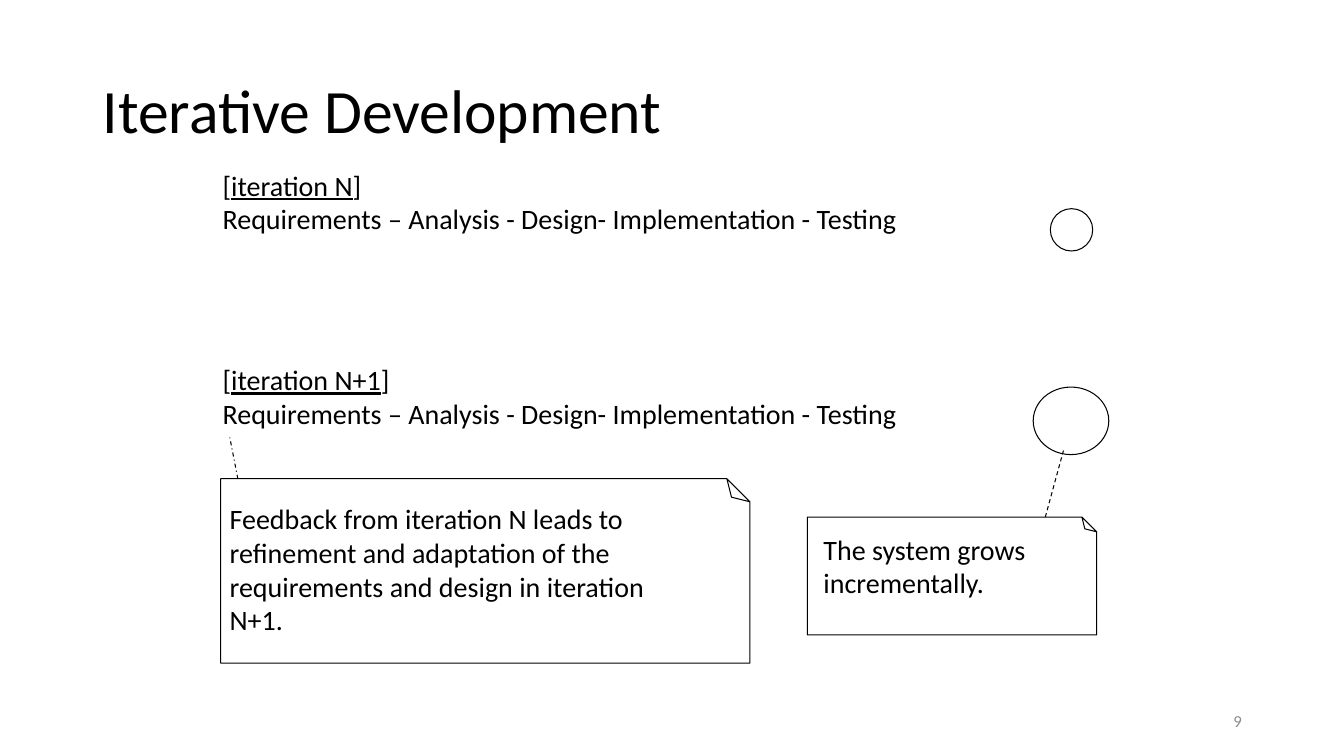
from dataclasses import dataclass

import pptx
import pptx.dml.color
import pptx.enum.dml
import pptx.enum.shapes
import pptx.enum.text
import pptx.oxml
import pptx.oxml.ns
import pptx.util

COLUMNS, ROWS = 40, 22.5
SLIDE_WIDTH, SLIDE_HEIGHT = pptx.util.Inches(13.33), pptx.util.Inches(7.5)
PHASES = "Requirements – Analysis - Design- Implementation - Testing"
ALIGN = pptx.enum.text.PP_ALIGN
ANCHOR = pptx.enum.text.MSO_ANCHOR
SHAPE = pptx.enum.shapes.MSO_SHAPE
DASH = pptx.enum.dml.MSO_LINE


@dataclass(frozen=True)
class Theme:
    font: str = "Calibri"
    ink: str = "000000"
    muted: str = "8C8C8C"
    title_size: int = 44
    body_size: int = 20
    number_size: int = 12
    line_width: float = 0.75


@dataclass(frozen=True)
class Box:
    """An area of the slide, in grid columns and rows."""
    left: float
    top: float
    width: float
    height: float

    def inner(self, left, top, width, height):
        return Box(self.left + left, self.top + top, width, height)

    def lengths(self):
        return (*point(self.left, self.top), *point(self.width, self.height))


THEME = Theme()


def point(column, row):
    return round(SLIDE_WIDTH * column / COLUMNS), round(SLIDE_HEIGHT * row / ROWS)


def color(value):
    return pptx.dml.color.RGBColor.from_string(value)


def add_element(parent, tag, **attributes):
    parent.append(parent.makeelement(pptx.oxml.ns.qn(tag), attributes))


def write_text(frame, lines, size=THEME.body_size, ink=THEME.ink, align=ALIGN.LEFT,
               anchor=ANCHOR.TOP, spacing=1.0, wrap=False):
    """Each line is a list of (text, underlined) runs."""
    frame.word_wrap = wrap
    frame.vertical_anchor = anchor
    frame.auto_size = (pptx.enum.text.MSO_AUTO_SIZE.NONE if wrap
                       else pptx.enum.text.MSO_AUTO_SIZE.SHAPE_TO_FIT_TEXT)
    for index, runs in enumerate(lines):
        paragraph = frame.add_paragraph() if index else frame.paragraphs[0]
        paragraph.alignment = align
        paragraph.line_spacing = spacing
        for text, underlined in runs:
            run = paragraph.add_run()
            run.text = text
            run.font.name = THEME.font
            run.font.size = pptx.util.Pt(size)
            run.font.underline = underlined
            run.font.color.rgb = color(ink)


def add_text(slide, box, lines, **text_format):
    write_text(slide.shapes.add_textbox(*box.lengths()).text_frame, lines, **text_format)


def style_line(line):
    line.color.rgb = color(THEME.ink)
    line.width = pptx.util.Pt(THEME.line_width)


def add_outline(slide, kind, box):
    shape = slide.shapes.add_shape(kind, *box.lengths())
    shape.shadow.inherit = False
    shape.fill.background()
    style_line(shape.line)
    return shape


def add_title(slide, box, text):
    title = slide.shapes.title
    title.left, title.top, title.width, title.height = box.lengths()
    write_text(title.text_frame, [[(text, False)]], size=THEME.title_size,
               anchor=ANCHOR.MIDDLE, spacing=0.9, wrap=True)


def add_iteration(slide, box, name, circle):
    """Write the phases and draw the system as a circle, placed relative to the box."""
    heading = [("[", False), (name, True), ("]", False)]
    add_text(slide, box, [heading, [(PHASES, False)]])
    add_outline(slide, SHAPE.OVAL, box.inner(*circle))


def add_note(slide, box, lines, text_area, pointer, dash):
    """Draw a dog-eared note; the pointer runs from its top edge to what it explains."""
    properties = add_outline(slide, SHAPE.FOLDED_CORNER, box).element.spPr
    properties.find(pptx.oxml.ns.qn("a:xfrm")).set("flipV", "1")
    geometry = properties.find(pptx.oxml.ns.qn("a:prstGeom"))
    adjustments = geometry.find(pptx.oxml.ns.qn("a:avLst"))
    add_element(adjustments, "a:gd", name="adj", fmla="val 12500")
    add_text(slide, box.inner(*text_area), [[(line, False)] for line in lines])
    start, end = [point(box.left + column, box.top + row) for column, row in pointer]
    connector = slide.shapes.add_connector(
        pptx.enum.shapes.MSO_CONNECTOR.STRAIGHT, *start, *end)
    style_line(connector.line)
    connector.line.dash_style = dash
    add_element(connector.element.spPr, "a:effectLst")


def add_page_number(slide, box, number):
    add_text(slide, box, [[(number, False)]], size=THEME.number_size, ink=THEME.muted,
             align=ALIGN.RIGHT, anchor=ANCHOR.MIDDLE, wrap=True)


def build_iteration_slide(presentation):
    slide = presentation.slides.add_slide(presentation.slide_layouts[5])
    add_title(slide, Box(2.76, 1.2, 34.5, 4.35), "Iterative Development")
    add_iteration(slide, Box(6.33, 4.86, 20.88, 2.31), "iteration N",
                  circle=(24.93, 1.35, 1.26, 1.26))
    add_iteration(slide, Box(6.33, 10.65, 20.88, 2.31), "iteration N+1",
                  circle=(24.42, 0.87, 2.25, 2.01))
    add_note(slide, Box(6.57, 14.25, 15.75, 5.49),
             ["Feedback from iteration N leads to", "refinement and adaptation of the",
              "requirements and design in iteration", "N+1."],
             text_area=(-0.03, 0.54, 13.08, 4.35),
             pointer=[(0.51, 0), (0.27, -1.23)], dash=DASH.DASH_DOT)
    add_note(slide, Box(24.03, 15.39, 8.61, 3.51),
             ["The system grows", "incrementally."],
             text_area=(0.18, 0.3, 6.66, 2.31),
             pointer=[(7.08, 0), (7.62, -1.98)], dash=DASH.DASH)
    add_page_number(slide, Box(28.26, 20.85, 9, 1.2), "9")


def main():
    presentation = pptx.Presentation()
    presentation.slide_width, presentation.slide_height = SLIDE_WIDTH, SLIDE_HEIGHT
    build_iteration_slide(presentation)
    presentation.save("out.pptx")


if __name__ == "__main__":
    main()
